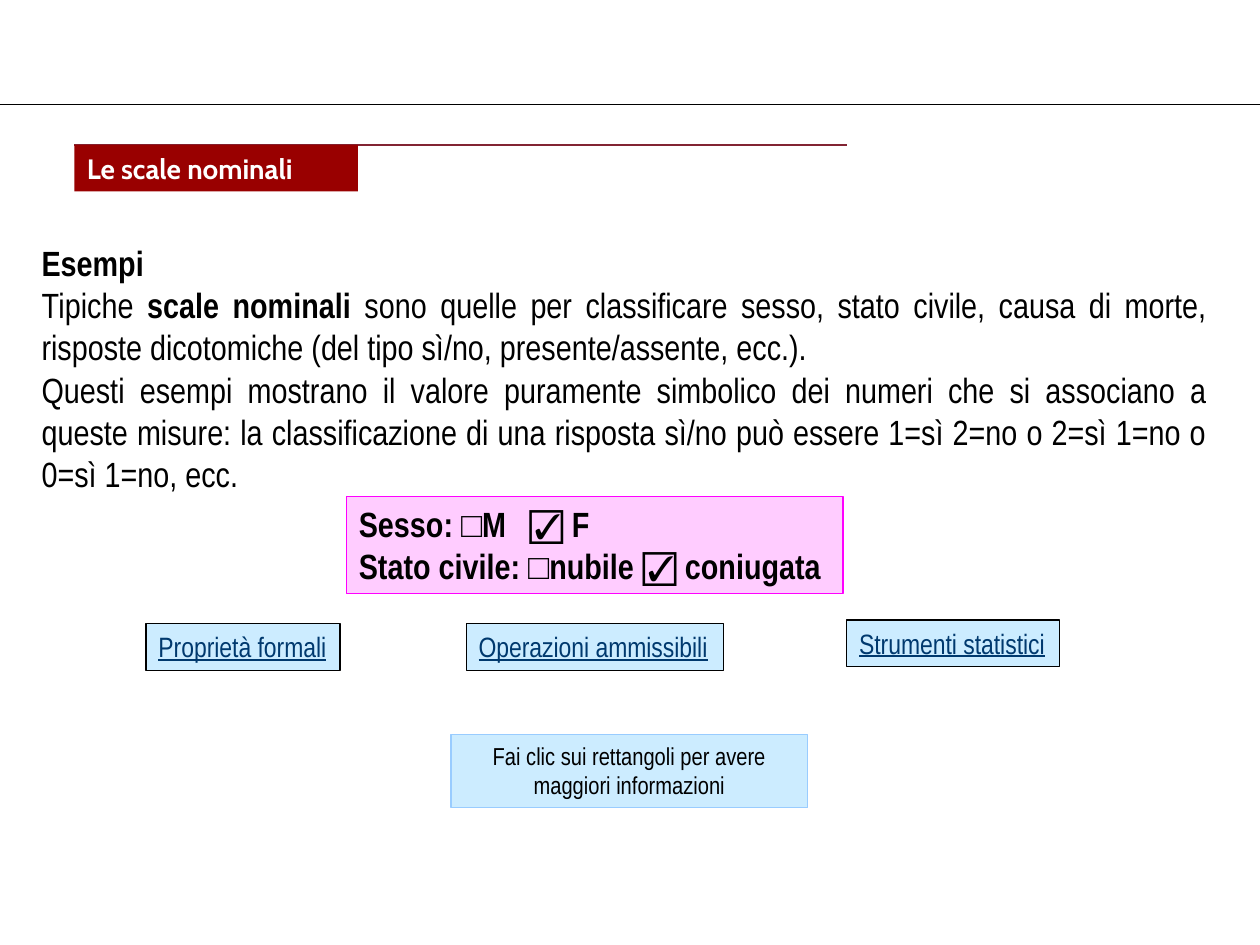
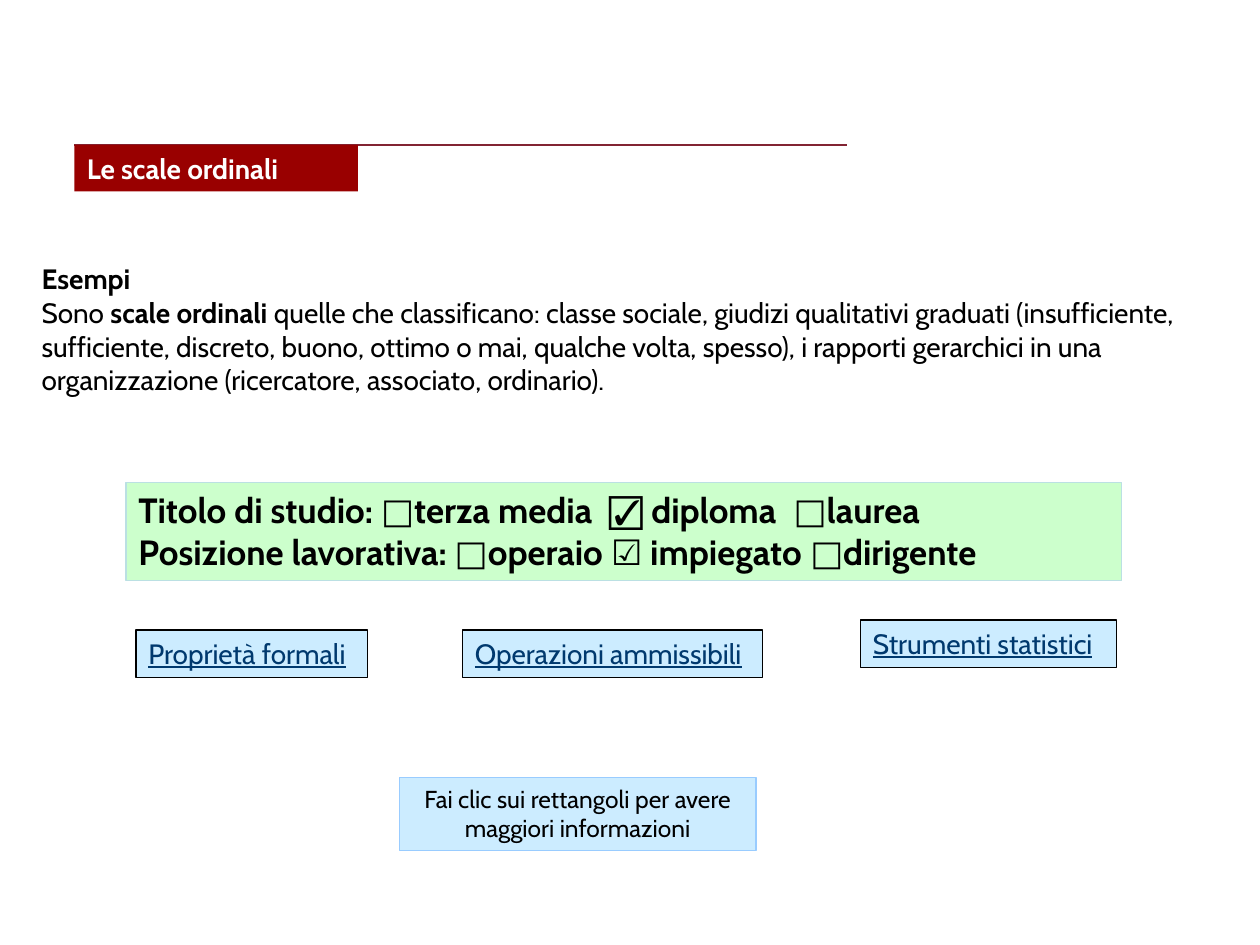
from lxml.etree import SubElement
from pptx import Presentation
from pptx.dml.color import RGBColor
from pptx.enum.shapes import MSO_CONNECTOR, MSO_SHAPE
from pptx.enum.text import MSO_ANCHOR, PP_ALIGN
from pptx.oxml.ns import qn
from pptx.util import Inches, Pt

BLACK = RGBColor(0x00, 0x00, 0x00)
WHITE = RGBColor(0xFF, 0xFF, 0xFF)
RULE_RED = RGBColor(0x82, 0x24, 0x33)
TITLE_RED = RGBColor(0x99, 0x00, 0x00)
PINK = RGBColor(0xFF, 0xCC, 0xFF)
MAGENTA = RGBColor(0xFF, 0x00, 0xFF)
MINT = RGBColor(0xCC, 0xFF, 0xCC)
PALE_TEAL = RGBColor(0xBB, 0xE0, 0xE3)
SKY = RGBColor(0xCC, 0xEC, 0xFF)
SKY_EDGE = RGBColor(0x99, 0xCC, 0xFF)
LINK_BLUE = RGBColor(0x00, 0x39, 0x6E)
NARROW = "Arial Narrow"
CABIN = "Cabin"
TOPICS = ("Proprietà formali", "Operazioni ammissibili", "Strumenti statistici")
HINT = "Fai clic sui rettangoli per avere maggiori informazioni"


def style(paragraph, font_name, size, color=BLACK, bold=None, underline=None):
    font = paragraph.font
    font.name = font_name
    font.size = Pt(size)
    font.color.rgb = color
    font.bold = bold
    font.underline = underline


def add_rule(slide, start, end, color, width):
    rule = slide.shapes.add_connector(
        MSO_CONNECTOR.STRAIGHT, *(Inches(v) for v in (*start, *end)))
    rule.line.color.rgb = color
    rule.line.width = Pt(width)
    SubElement(rule.element.spPr, qn("a:effectLst"))


def add_panel(slide, box, fill, edge=None):
    panel = slide.shapes.add_shape(MSO_SHAPE.RECTANGLE, *(Inches(v) for v in box))
    panel.shadow.inherit = False
    panel.fill.solid()
    panel.fill.fore_color.rgb = fill
    if edge is None:
        panel.line.fill.background()
    else:
        panel.line.color.rgb = edge
        panel.line.width = Pt(0.75)
    frame = panel.text_frame
    frame.word_wrap = True
    frame.vertical_anchor = MSO_ANCHOR.TOP
    frame.paragraphs[0].alignment = PP_ALIGN.LEFT
    return frame


def add_heading(slide, title):
    left, top = 0.59, 1.15
    add_rule(slide, (left, top), (left + 6.13, top), RULE_RED, 1.5)
    frame = add_panel(slide, (left, top, 2.25, 0.37), TITLE_RED)
    frame.text = title
    style(frame.paragraphs[0], CABIN, 16, WHITE, bold=True)


def add_examples(slide, box, font_name, size, paragraphs):
    frame = slide.shapes.add_textbox(*(Inches(v) for v in box)).text_frame
    frame.word_wrap = True
    frame.margin_left = frame.margin_right = 0
    frame.margin_top = frame.margin_bottom = 0
    for index, (alignment, pieces) in enumerate(paragraphs):
        paragraph = frame.add_paragraph() if index else frame.paragraphs[0]
        paragraph.alignment = alignment
        style(paragraph, font_name, size)
        for text, bold in pieces:
            run = paragraph.add_run()
            run.text = text
            run.font.bold = bold


def add_form(slide, box, fill, edge, font_name, answers, tab_stops):
    frame = add_panel(slide, box, fill, edge)
    frame.margin_right = 0
    frame.text = "\n".join(answers)
    for paragraph in frame.paragraphs:
        paragraph.alignment = PP_ALIGN.LEFT
        if "\t" in paragraph.text:
            tabs = SubElement(paragraph._p.get_or_add_pPr(), qn("a:tabLst"))
            for stop in tab_stops:
                SubElement(tabs, qn("a:tab"), pos=str(Inches(stop)), algn="l")
        style(paragraph, font_name, 20, bold=True)


def add_topic_buttons(slide, boxes, font_name):
    for topic, box in zip(TOPICS, boxes):
        frame = add_panel(slide, box, SKY, BLACK)
        frame.margin_right = 0
        frame.text = topic
        style(frame.paragraphs[0], font_name, 16, LINK_BLUE, underline=True)


def add_hint(slide, left, top, font_name):
    frame = add_panel(slide, (left, top, 2.83, 0.58), SKY, SKY_EDGE)
    frame.text = HINT
    frame.paragraphs[0].alignment = PP_ALIGN.CENTER
    style(frame.paragraphs[0], font_name, 14)


def build_nominal_scales(slide):
    add_rule(slide, (10, 0.83), (0, 0.83), BLACK, 1)
    add_heading(slide, "Le scale nominali")
    add_examples(slide, (0.33, 1.92, 9.25, 2.02), NARROW, 20, [
        (PP_ALIGN.JUSTIFY, [("Esempi", True)]),
        (PP_ALIGN.JUSTIFY, [
            ("Tipiche ", False),
            ("scale nominali", True),
            (" sono quelle per classificare sesso, stato civile, causa di morte, "
             "risposte dicotomiche (del tipo sì/no, presente/assente, ecc.).", False)]),
        (PP_ALIGN.JUSTIFY, [
            ("Questi esempi mostrano il valore puramente simbolico dei numeri che si "
             "associano a queste misure: la classificazione di una risposta sì/no può "
             "essere 1=sì 2=no o 2=sì 1=no o 0=sì 1=no, ecc.", False)]),
    ])
    add_form(slide, (2.75, 3.94, 3.94, 0.77), PINK, MAGENTA, NARROW,
             ("Sesso: □M\t☑ F", "Stato civile: □nubile ☑ coniugata"), [1.35])
    add_topic_buttons(slide, [(1.16, 4.95, 1.54, 0.37), (3.7, 4.95, 2.04, 0.37),
                              (6.72, 4.92, 1.69, 0.37)], NARROW)
    add_hint(slide, 3.58, 5.83, NARROW)


def build_ordinal_scales(slide):
    add_heading(slide, "Le scale ordinali")
    add_examples(slide, (0.33, 2.08, 9.33, 1.07), CABIN, 16, [
        (PP_ALIGN.JUSTIFY, [("Esempi", True)]),
        (PP_ALIGN.LEFT, [
            ("Sono ", False),
            ("scale ordinali", True),
            (" quelle che classificano: classe sociale, giudizi qualitativi graduati "
             "(insufficiente, sufficiente, discreto, buono, ottimo o mai, qualche volta, "
             "spesso), i rapporti gerarchici in una organizzazione (ricercatore, "
             "associato, ordinario).", False)]),
    ])
    add_form(slide, (1, 3.83, 7.9, 0.78), MINT, PALE_TEAL, CABIN,
             ("Titolo di studio: □terza media\t☑ diploma\t□laurea",
              "Posizione lavorativa: □operaio ☑ impiegato □dirigente"), [3.73, 5.2])
    add_topic_buttons(slide, [(1.08, 5, 1.84, 0.38), (3.67, 5, 2.38, 0.38),
                              (6.83, 4.92, 2.03, 0.38)], CABIN)
    add_hint(slide, 3.17, 6.17, CABIN)


def main():
    presentation = Presentation()
    presentation.slide_width = Inches(10)
    presentation.slide_height = Inches(7.5)
    blank = presentation.slide_layouts[6]
    for build in (build_nominal_scales, build_ordinal_scales):
        build(presentation.slides.add_slide(blank))
    presentation.save("out.pptx")


if __name__ == "__main__":
    main()
